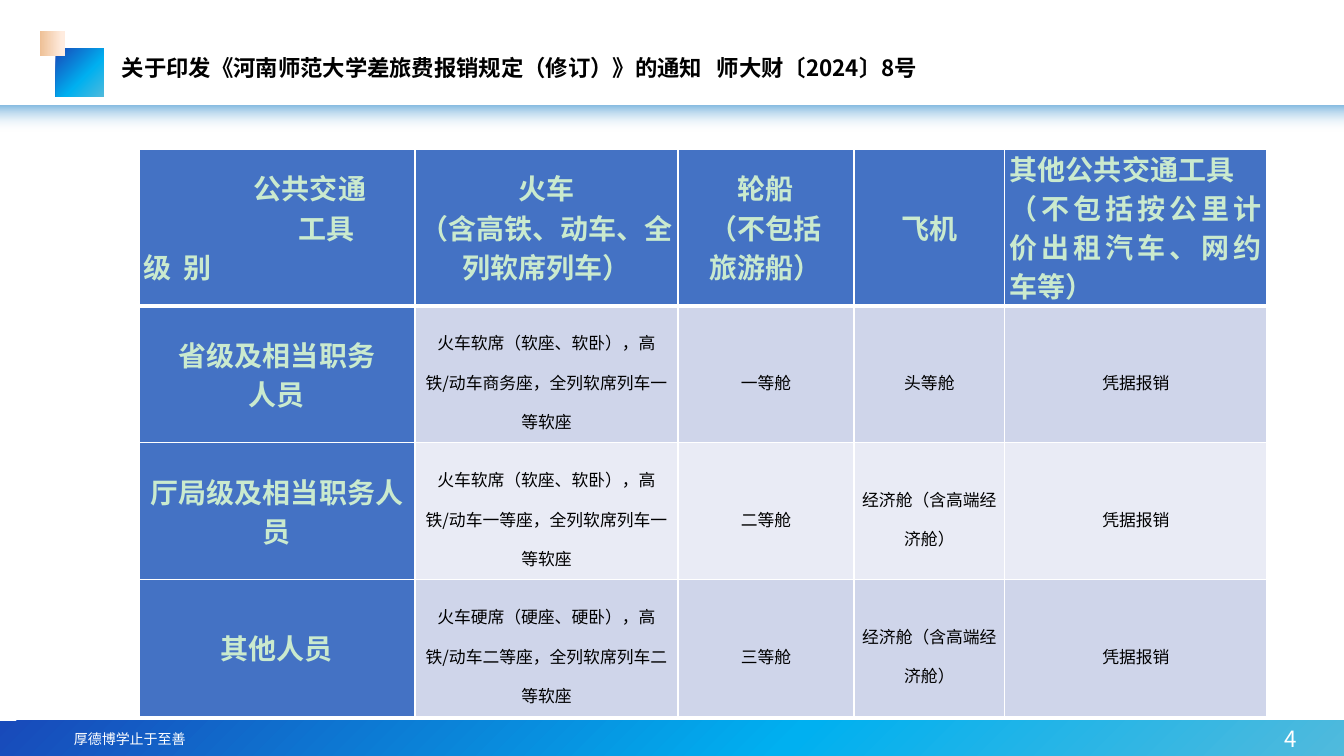
"""Build a slide with the travel class table for each staff rank."""
import pptx
import pptx.util
import pptx.dml.color
import pptx.enum.shapes
import pptx.enum.text
import pptx.oxml
import pptx.oxml.ns
import lxml.etree

Pt = pptx.util.Pt
RGB = pptx.dml.color.RGBColor
ALIGN = pptx.enum.text.PP_ALIGN
MIDDLE = pptx.enum.text.MSO_ANCHOR.MIDDLE
qn = pptx.oxml.ns.qn

TITLE = "关于印发《河南师范大学差旅费报销规定（修订）》的通知\t师大财〔2024〕8号"
MOTTO = "厚德博学止于至善"
PAGE = "4"
ROWS = [
    ["公共交通\n工具\n级\t别", "火车\n（含高铁、动车、全列软席列车）",
     "轮船\n（不包括\n旅游船）", "飞机",
     "其他公共交通工具\n（不包括按公里计价出租汽车、网约车等）"],
    ["省级及相当职务\n人员",
     "火车软席（软座、软卧），高铁/动车商务座，全列软席列车一等软座",
     "一等舱", "头等舱", "凭据报销"],
    ["厅局级及相当职务人员",
     "火车软席（软座、软卧），高铁/动车一等座，全列软席列车一等软座",
     "二等舱", "经济舱（含高端经济舱）", "凭据报销"],
    ["其他人员",
     "火车硬席（硬座、硬卧），高铁/动车二等座，全列软席列车二等软座",
     "三等舱", "经济舱（含高端经济舱）", "凭据报销"],
]
WIDTHS = [276, 263, 176, 151, 262]
HEIGHT = 137
TABLE = (139, 149)

FONT = "Noto Sans CJK SC"
WHITE = RGB(0xFF, 0xFF, 0xFF)
BLACK = RGB(0, 0, 0)
MINT = RGB(0xCA, 0xEA, 0xCE)
BLUE = RGB(0x44, 0x72, 0xC4)
BANDS = [RGB(0xE9, 0xEB, 0xF5), RGB(0xCF, 0xD5, 0xEA)]
OCEAN = [(0, RGB(0x18, 0x4A, 0xBA), 100), (59, RGB(0, 0xB0, 0xF0), 100),
         (100, RGB(0x50, 0xBA, 0xDC), 100)]
HAZE = [(0, RGB(0, 0x70, 0xC0), 48), (100, WHITE, 0)]
PEACH = [(11, RGB(0xFF, 0xEC, 0xDF), 100), (100, RGB(0xEE, 0xC0, 0x96), 100)]
BLOCKS = [
    ((0, 721, 1344, 35), OCEAN, 45),
    ((0, 106, 1344, 26), HAZE, 90),
    ((56, 49, 48, 48), OCEAN, 45),
    ((40, 31, 25, 25), PEACH, 180),
]


def px(count):
    return round(count * 914400 / 100.8)


def add(parent, tag, **attrs):
    node = lxml.etree.SubElement(parent, qn(tag))
    for key, value in attrs.items():
        node.set(key, str(value))
    return node


def write(frame, text, size=16, color=BLACK, bold=False, aligns=(ALIGN.LEFT,),
          space=None, insets=(), tab=0):
    """Fill a frame, one paragraph a line; the last align serves later lines."""
    frame.word_wrap = True
    for i, line in enumerate(text.split("\n")):
        para = frame.paragraphs[0] if i == 0 else frame.add_paragraph()
        props = para._p.get_or_add_pPr()
        if i < len(insets):
            props.set("marL", str(px(insets[i][0])))
            props.set("indent", str(px(insets[i][1])))
        if "\t" in line:
            stops = add(props, "a:tabLst")
            add(stops, "a:tab", pos=px(tab), algn="l")
        para.alignment = aligns[min(i, len(aligns) - 1)]
        if space:
            para.line_spacing = space
        run = para.add_run()
        run.text = line
        run.font.name = FONT
        run.font.size = Pt(size)
        run.font.bold = bold
        run.font.color.rgb = color
        add(run._r.get_or_add_rPr(), "a:ea", typeface=FONT)


def block(slide, place, stops, angle):
    kind = pptx.enum.shapes.MSO_SHAPE.RECTANGLE
    shape = slide.shapes.add_shape(kind, *map(px, place))
    grad = add(shape._element.spPr, "a:gradFill", rotWithShape=1)
    group = add(grad, "a:gsLst")
    for pos, color, alpha in stops:
        stop = add(group, "a:gs", pos=pos * 1000)
        tint = add(stop, "a:srgbClr", val=color)
        if alpha < 100:
            add(tint, "a:alpha", val=alpha * 1000)
    add(grad, "a:lin", ang=angle * 60000, scaled=0)
    shape.line.fill.background()
    shape.shadow.inherit = False


def label(slide, place, text, anchor=None, **style):
    frame = slide.shapes.add_textbox(*map(px, place)).text_frame
    frame.vertical_anchor = anchor
    write(frame, text, **style)


def edge(cell, row):
    props = cell._tc.get_or_add_tcPr()
    for side in "LRTB":
        thick = (row, side) in ((0, "B"), (1, "T"))
        line = add(props, "a:ln" + side, w=Pt(3 if thick else 1))
        add(add(line, "a:solidFill"), "a:srgbClr", val=WHITE)


def grid(slide):
    table = slide.shapes.add_table(
        len(ROWS), len(WIDTHS), *map(px, TABLE),
        px(sum(WIDTHS)), px(HEIGHT * len(ROWS))).table
    for col, width in enumerate(WIDTHS):
        table.columns[col].width = px(width)
    for r, row in enumerate(ROWS):
        table.rows[r].height = px(HEIGHT)
        for c, text in enumerate(row):
            cell = table.cell(r, c)
            head = r == 0 or c == 0
            edge(cell, r)
            cell.fill.solid()
            cell.fill.fore_color.rgb = BLUE if head else BANDS[r % 2]
            cell.vertical_anchor = MIDDLE
            cell.margin_left = cell.margin_right = px(5)
            cell.margin_top = cell.margin_bottom = 0
            aligns, insets = (ALIGN.CENTER,), ()
            if (r, c) == (0, 0):
                aligns = (ALIGN.CENTER, ALIGN.CENTER, ALIGN.JUSTIFY)
                insets = ((33, 33), (33, 67))
            elif (r, c) == (0, len(row) - 1):
                aligns = (ALIGN.JUSTIFY,)
            write(cell.text_frame, text, size=20 if head else 12,
                  color=MINT if head else BLACK, bold=head, aligns=aligns,
                  space=Pt(28), insets=insets, tab=40)


def main():
    deck = pptx.Presentation()
    deck.slide_width, deck.slide_height = px(1344), px(756)
    slide = deck.slides.add_slide(deck.slide_layouts[6])
    slide.background.fill.solid()
    slide.background.fill.fore_color.rgb = WHITE
    for place, stops, angle in BLOCKS:
        block(slide, place, stops, angle)
    label(slide, (64, 721, 296, 35), MOTTO, MIDDLE, size=10, color=WHITE,
          aligns=(ALIGN.JUSTIFY,), space=1.1)
    label(slide, (1263, 724, 55, 30), PAGE, MIDDLE, color=WHITE,
          aligns=(ALIGN.CENTER,))
    label(slide, (112, 49, 879, 67), TITLE, bold=True, tab=595)
    grid(slide)
    deck.save("out.pptx")


if __name__ == "__main__":
    main()
